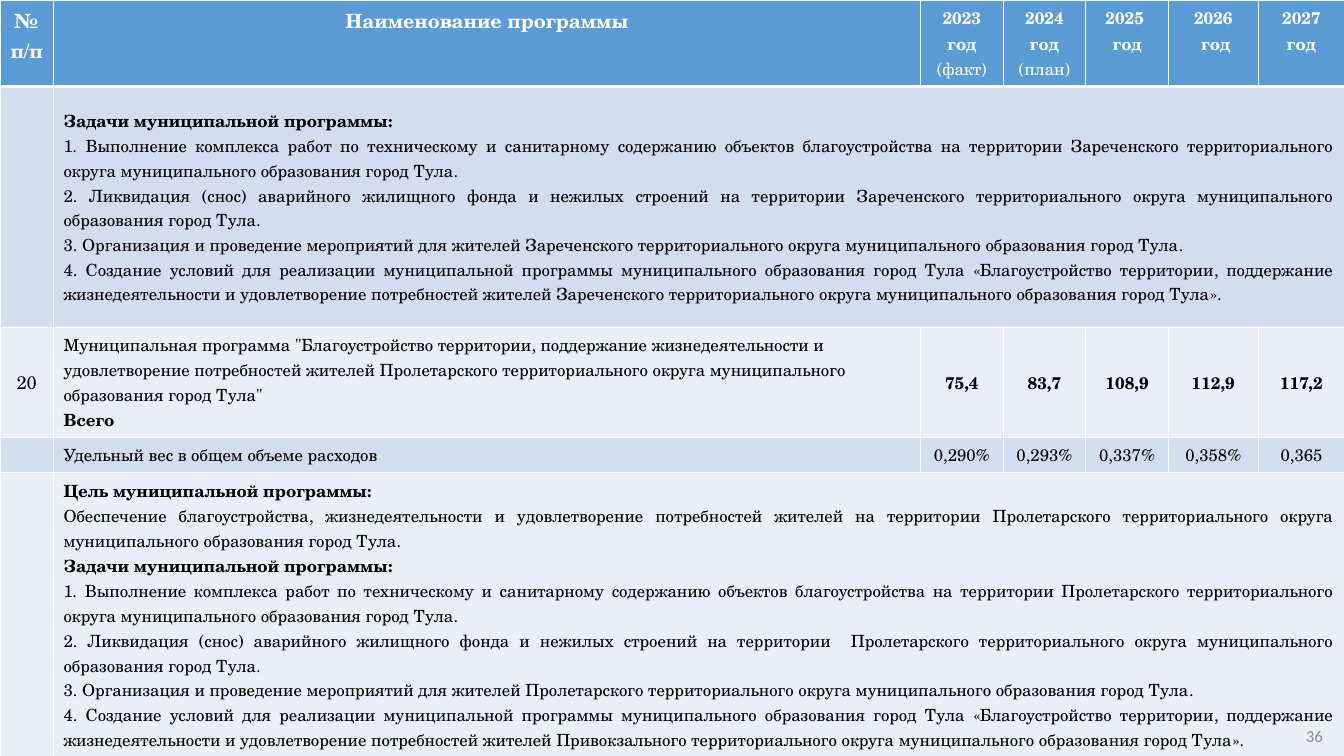
"""Build a slide with a table of municipal programmes and their yearly spending."""
from dataclasses import dataclass

from lxml import etree
from pptx import Presentation
from pptx.dml.color import RGBColor
from pptx.enum.text import MSO_ANCHOR, PP_ALIGN
from pptx.oxml.ns import qn
from pptx.util import Inches, Pt

LEFT, CENTER, RIGHT, JUSTIFY = PP_ALIGN.LEFT, PP_ALIGN.CENTER, PP_ALIGN.RIGHT, PP_ALIGN.JUSTIFY
TOP, MIDDLE = MSO_ANCHOR.TOP, MSO_ANCHOR.MIDDLE
COLORS = {"header": "5B9BD5", "dark": "D2DEEF", "light": "EAEFF7",
          "white": "FFFFFF", "black": "000000", "number": "8C8C8C"}
SERIF, SANS = "TeX Gyre Schola", "Calibri"
COLUMN_WIDTHS = (0.53, 8.6, 0.82, 0.82, 0.82, 0.89, 0.86)
TOWN = "муниципального образования город Тула"
NEEDS = "жизнедеятельности и удовлетворение потребностей жителей"


@dataclass(frozen=True)
class Span:
    text: str
    bold: bool = False
    size: float = 12
    color: str = "black"
    font: str = SERIF


@dataclass(frozen=True)
class Entry:
    paras: tuple[tuple[Span, ...], ...] = ()
    align: PP_ALIGN = CENTER
    anchor: MSO_ANCHOR = MIDDLE


@dataclass(frozen=True)
class Row:
    height: float
    fill: str
    entries: tuple[Entry, ...]


def heading(*lines: str, size: float = 12, note: str = "") -> Entry:
    """Return a white header entry, with an optional regular note at its end."""
    paras = [(Span(line, True, size, "white"),) for line in lines]
    if note:
        paras[-1] += (Span(note, False, size, "white"),)
    return Entry(tuple(paras), CENTER, TOP)


def figures(values: str, bold: bool = False) -> tuple[Entry, ...]:
    """Return one centred entry for each yearly value."""
    return tuple(Entry(((Span(value, bold),),)) for value in values.split())


def tasks(area: str, cleared_area: str, supported_area: str) -> tuple[tuple[Span, ...], ...]:
    """Return the title and the four tasks of a programme."""
    lines = (
        "1. Выполнение комплекса работ по техническому и санитарному содержанию объектов "
        f"благоустройства на территории {area} территориального округа {TOWN}.",
        "2. Ликвидация (снос) аварийного жилищного фонда и нежилых строений на территории "
        f"{cleared_area} территориального округа {TOWN}.",
        f"3. Организация и проведение мероприятий для жителей {area} территориального округа {TOWN}.",
        f"4. Создание условий для реализации муниципальной программы {TOWN} «Благоустройство "
        f"территории, поддержание {NEEDS} {supported_area} территориального округа {TOWN}».",
    )
    title = (Span("Задачи муниципальной программы:", True),)
    return (title, *((Span(line),) for line in lines))


PROGRAMME = (
    (Span(f'Муниципальная программа "Благоустройство территории, поддержание {NEEDS} '
          f'Пролетарского территориального округа {TOWN}"'),),
    (Span("Всего", True),),
)
GOAL = (
    (Span("Цель муниципальной программы: ", True),),
    (Span(f"Обеспечение благоустройства, {NEEDS} на территории Пролетарского "
          f"территориального округа {TOWN}."),),
)
ROWS = (
    Row(0.74, "header", (
        heading("№ п/п", size=14), heading("Наименование программы", size=14),
        heading("2023 год ", note="(факт)"), heading("2024 год ", note="(план)"),
        heading("2025 ", "год"), heading("2026", " год"), heading("2027", "год"))),
    Row(2.39, "dark", (
        Entry(), Entry(tasks("Зареченского", "Зареченского", "Зареченского"), JUSTIFY))),
    Row(1.02, "light", (
        Entry(((Span("20", size=13),),)), Entry(PROGRAMME, LEFT),
        *figures("75,4 83,7 108,9 112,9 117,2", True))),
    Row(0.33, "dark", (
        Entry(), Entry(((Span("Удельный вес в общем объеме расходов"),),), JUSTIFY, TOP),
        *figures("0,290% 0,293% 0,337% 0,358% 0,365"))),
    Row(2.64, "light", (
        Entry(), Entry(GOAL + tasks("Пролетарского", " Пролетарского", "Привокзального"), JUSTIFY))),
)


def write(frame, entry: Entry) -> None:
    """Write the paragraphs of an entry into a text frame."""
    for index, spans in enumerate(entry.paras):
        para = frame.add_paragraph() if index else frame.paragraphs[0]
        para.alignment = entry.align
        for span in spans:
            run = para.add_run()
            run.text = span.text
            formats = {"name": span.font, "size": Pt(span.size), "bold": span.bold}
            for name, value in formats.items():
                setattr(run.font, name, value)
            run.font.color.rgb = RGBColor.from_string(COLORS[span.color])
    if not entry.paras:
        etree.SubElement(frame.paragraphs[0]._p, qn("a:endParaRPr"), sz="1200")


def style_cell(cell, fill: str, top: float, bottom: float) -> None:
    """Give a cell its white borders and its fill."""
    properties = cell._tc.get_or_add_tcPr()
    for side, width in {"L": 1, "R": 1, "T": top, "B": bottom}.items():
        line = etree.SubElement(properties, qn(f"a:ln{side}"), w=str(Pt(width)))
        solid = etree.SubElement(line, qn("a:solidFill"))
        etree.SubElement(solid, qn("a:srgbClr"), val=COLORS["white"])
    cell.fill.solid()
    cell.fill.fore_color.rgb = RGBColor.from_string(COLORS[fill])


def add_programme_table(page) -> None:
    """Add the table of programmes."""
    table = page.shapes.add_table(len(ROWS), len(COLUMN_WIDTHS), 0, 0,
                                  Inches(13.33), Inches(7.12)).table
    for name in ("first_row", "horz_banding"):
        setattr(table, name, False)
    for column, width in zip(table.columns, COLUMN_WIDTHS):
        column.width = Inches(width)
    for index, row in enumerate(ROWS):
        table.rows[index].height = Inches(row.height)
        for cell in table.rows[index].cells:
            style_cell(cell, row.fill, 3 if index == 1 else 1, 3 if index == 0 else 1)
            etree.SubElement(cell.text_frame.paragraphs[0]._p, qn("a:endParaRPr"), sz="1200")
        if len(row.entries) < len(COLUMN_WIDTHS):
            table.cell(index, 1).merge(table.cell(index, len(COLUMN_WIDTHS) - 1))
        for position, entry in enumerate(row.entries):
            cell = table.cell(index, position)
            cell.vertical_anchor = entry.anchor
            if entry.paras:
                write(cell.text_frame, entry)


def add_page_number(page) -> None:
    """Add the page number at the lower right."""
    box = page.shapes.add_textbox(Inches(10.22), Inches(7.1), Inches(3), Inches(0.4))
    frame = box.text_frame
    for name, value in {"word_wrap": True, "vertical_anchor": MIDDLE}.items():
        setattr(frame, name, value)
    write(frame, Entry(((Span("36", color="number", font=SANS),),), RIGHT))


def main() -> None:
    """Build and save the deck."""
    deck = Presentation()
    deck.slide_width, deck.slide_height = Inches(13.33), Inches(7.5)
    page = deck.slides.add_slide(deck.slide_layouts[6])
    add_programme_table(page)
    add_page_number(page)
    deck.save("out.pptx")


if __name__ == "__main__":
    main()
